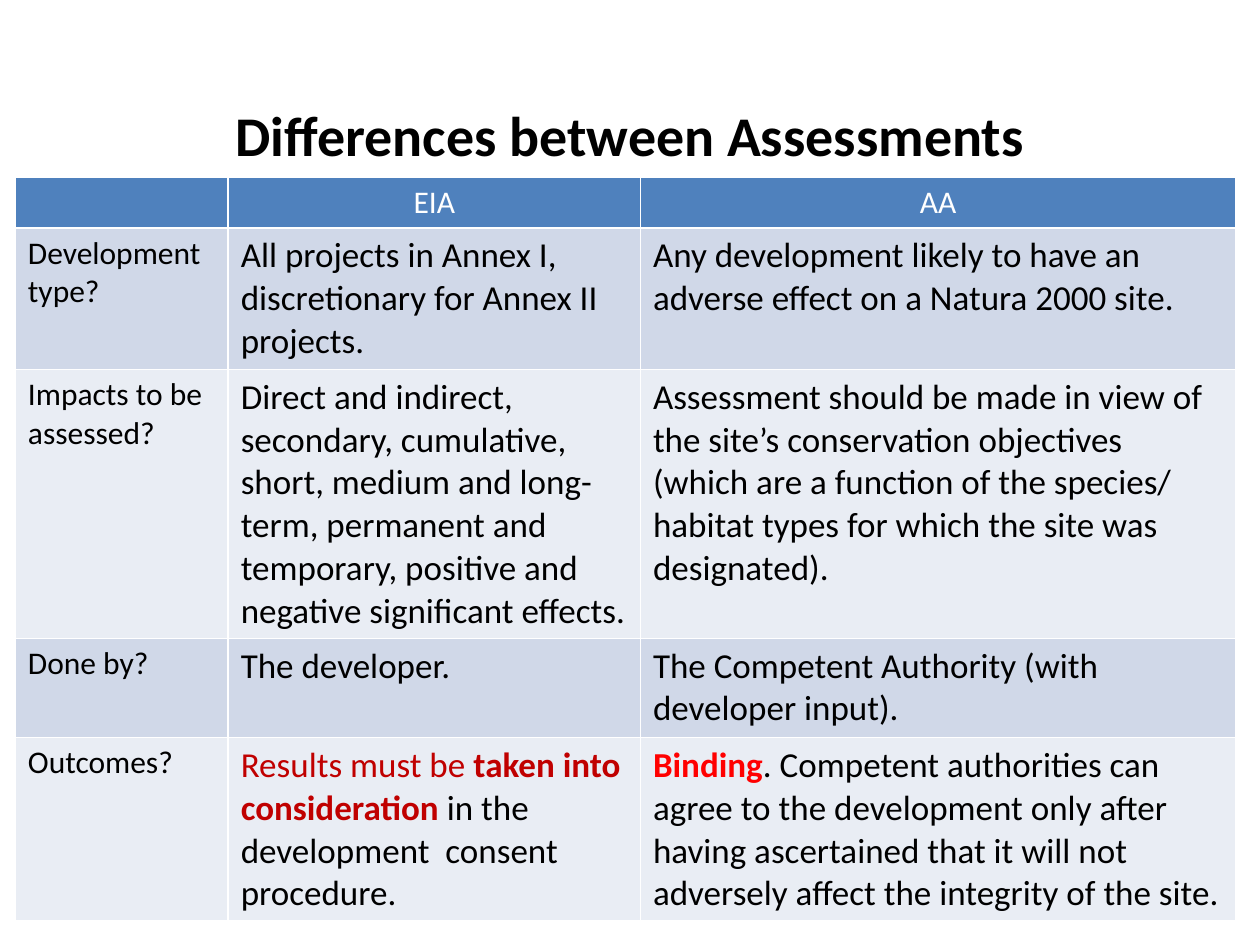
import pptx
import pptx.dml.color
import pptx.enum.text
import pptx.oxml.ns
import pptx.util
from lxml import etree

Cm = pptx.util.Cm
Pt = pptx.util.Pt
RGBColor = pptx.dml.color.RGBColor
PP_ALIGN = pptx.enum.text.PP_ALIGN

BLACK = RGBColor(0x00, 0x00, 0x00)
WHITE = RGBColor(0xFF, 0xFF, 0xFF)
HEADER_BLUE = RGBColor(0x4F, 0x81, 0xBD)
BAND_DARK = RGBColor(0xD0, 0xD8, 0xE8)
BAND_LIGHT = RGBColor(0xE9, 0xED, 0xF4)
DARK_RED = RGBColor(0xC0, 0x00, 0x00)
RED = RGBColor(0xFF, 0x00, 0x00)

COLUMN_WIDTHS = (4.29, 8.31, 12.0)
ROW_HEIGHTS = (1.02, 2.85, 5.42, 2.0, 3.69)
HEADINGS = ("", "EIA", "AA")
COMPARISON = (
    ("Development  type?",
     [("All projects in Annex I, discretionary for Annex II projects.", BLACK, False)],
     [("Any development likely to have an adverse effect on a Natura 2000 site.",
       BLACK, False)]),
    ("Impacts to be assessed?",
     [("Direct and indirect, secondary, cumulative, short, medium and long-term, "
       "permanent and temporary, positive and negative significant effects.",
       BLACK, False)],
     [("Assessment should be made in view of the site’s conservation objectives "
       "(which are a function of the species/ habitat types for which the site was "
       "designated).", BLACK, False)]),
    ("Done by?",
     [("The developer.", BLACK, False)],
     [("The Competent Authority (with developer input).", BLACK, False)]),
    ("Outcomes?",
     [("Results must be ", DARK_RED, False),
      ("taken into consideration ", DARK_RED, True),
      ("in the development  consent procedure.", BLACK, False)],
     [("Binding", RED, True),
      (". Competent authorities can agree to the development only after having "
       "ascertained that it will not adversely affect the integrity of the site.",
       BLACK, False)]),
)


class SlideBuilder:
    font_name = "Calibri"
    title_size = 32
    label_size = 18
    body_size = 20

    def __init__(self, slide):
        self.slide = slide

    def add_runs(self, paragraph, runs, size, align=PP_ALIGN.LEFT):
        paragraph.alignment = align
        paragraph.font.size = Pt(size)
        for words, color, bold in runs:
            run = paragraph.add_run()
            run.text = words
            run.font.name = self.font_name
            run.font.size = Pt(size)
            run.font.bold = bold
            run.font.color.rgb = color

    def title(self, words, left, top, width, height):
        heading = self.slide.shapes.add_textbox(Cm(left), Cm(top), Cm(width), Cm(height))
        frame = heading.text_frame
        frame.word_wrap = True
        frame.vertical_anchor = pptx.enum.text.MSO_ANCHOR.MIDDLE
        self.add_runs(frame.paragraphs[0], [(words, BLACK, True)],
                      self.title_size, PP_ALIGN.CENTER)

    def cell(self, cell, runs, size, fill, align=PP_ALIGN.LEFT):
        self.add_runs(cell.text_frame.paragraphs[0], runs, size, align)
        properties = cell._tc.get_or_add_tcPr()
        qn = pptx.oxml.ns.qn
        for side in ("a:lnL", "a:lnR", "a:lnT", "a:lnB"):
            line = etree.SubElement(properties, qn(side), w=str(Pt(1)))
            solid = etree.SubElement(line, qn("a:solidFill"))
            etree.SubElement(solid, qn("a:srgbClr"), val=str(WHITE))
        cell.fill.solid()
        cell.fill.fore_color.rgb = fill

    def table(self, headings, rows, left, top, widths, heights):
        grid = self.slide.shapes.add_table(
            len(heights), len(widths), Cm(left), Cm(top),
            Cm(sum(widths)), Cm(sum(heights))).table
        for column, width in zip(grid.columns, widths):
            column.width = Cm(width)
        for row, height in zip(grid.rows, heights):
            row.height = Cm(height)
        for cell, heading in zip(grid.rows[0].cells, headings):
            runs = [(heading, WHITE, False)] if heading else []
            self.cell(cell, runs, self.label_size, HEADER_BLUE, PP_ALIGN.CENTER)
        for number, (question, *answers) in enumerate(rows, 1):
            fill = BAND_DARK if number % 2 else BAND_LIGHT
            label, *answer_cells = grid.rows[number].cells
            self.cell(label, [(question, BLACK, False)], self.label_size, fill)
            for cell, runs in zip(answer_cells, answers):
                self.cell(cell, runs, self.body_size, fill)


def main():
    presentation = pptx.Presentation()
    presentation.slide_width = Cm(25.4)
    presentation.slide_height = Cm(19.05)
    builder = SlideBuilder(presentation.slides.add_slide(presentation.slide_layouts[6]))
    builder.title("Differences between Assessments", 1.27, 1.7, 22.86, 2)
    builder.table(HEADINGS, COMPARISON, 0.31, 3.58, COLUMN_WIDTHS, ROW_HEIGHTS)
    presentation.save("out.pptx")


if __name__ == "__main__":
    main()
